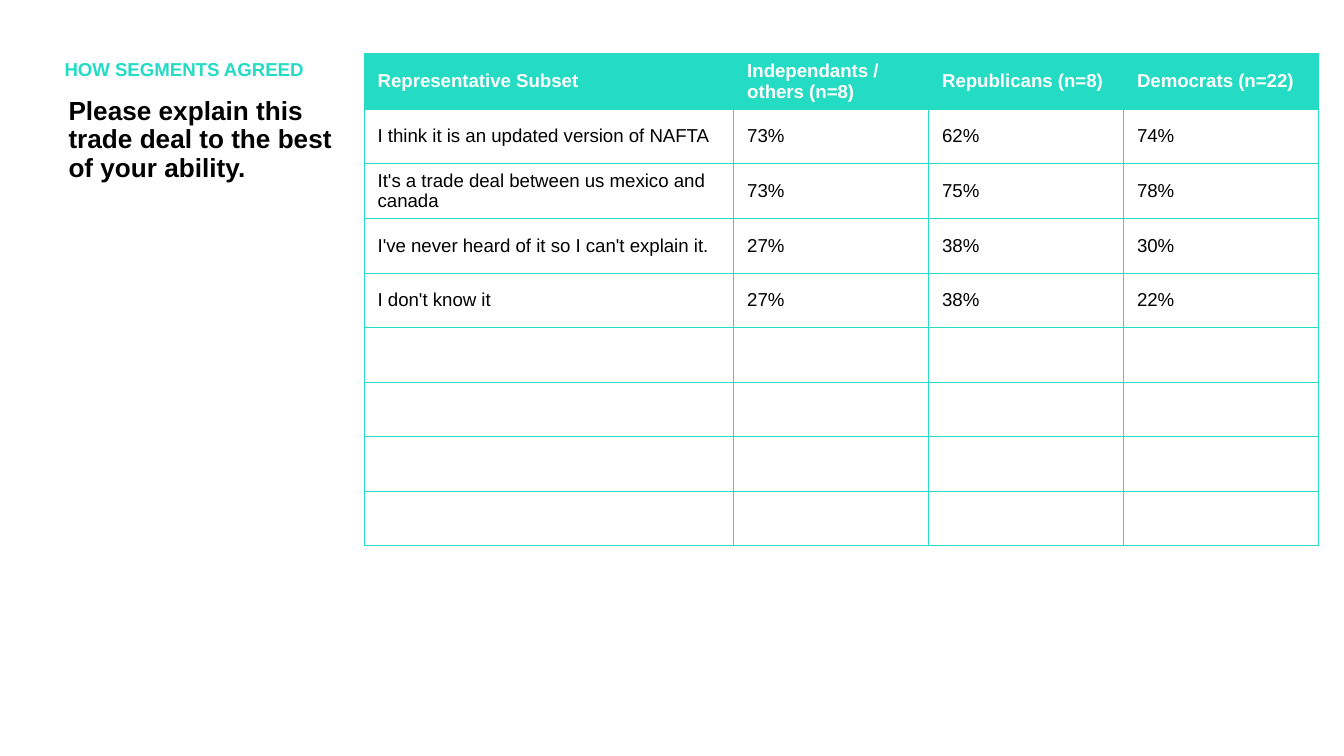
from lxml.etree import SubElement
from pptx import Presentation
from pptx.dml.color import RGBColor
from pptx.enum.text import MSO_ANCHOR as Anchor, MSO_AUTO_SIZE as Fit, PP_ALIGN as Align
from pptx.oxml.ns import qn
from pptx.util import Inches, Pt

TEAL = RGBColor(0x24, 0xDB, 0xC3)
WHITE = RGBColor(0xFF, 0xFF, 0xFF)
BLACK = RGBColor(0, 0, 0)
FONT = "Arial"

HEADS = ["Representative Subset", "Independants / others (n=8)",
         "Republicans (n=8)", "Democrats (n=22)"]
ROWS = [
    ["I think it is an updated version of NAFTA", "73%", "62%", "74%"],
    ["It's a trade deal between us mexico and canada", "73%", "75%", "78%"],
    ["I've never heard of it so I can't explain it.", "27%", "38%", "30%"],
    ["I don't know it", "27%", "38%", "22%"],
]
SPARE = 4  # empty rows under the answers
SHARES = [2.75, 1.45, 1.45, 1.45]


def write(frame, text, size=10, color=BLACK, bold=False, lead=None, before=None):
    """Put one formatted, left-aligned paragraph in a text frame."""
    par = frame.paragraphs[0]
    par.alignment = Align.LEFT
    par.line_spacing = lead
    par.space_before = before
    run = par.add_run()
    run.text = text
    font = run.font
    font.name, font.size, font.bold = FONT, Pt(size), bold
    font.color.rgb = color
    return par


def place(holder, box, text, **style):
    """Move a placeholder to its box and fill it, with no bullet."""
    holder.left, holder.top, holder.width, holder.height = map(Inches, box)
    frame = holder.text_frame
    frame.auto_size, frame.word_wrap = Fit.NONE, True
    frame.vertical_anchor = Anchor.TOP
    par = write(frame, text, lead=0.9, before=Pt(10), bold=True, **style)
    props = par._p.get_or_add_pPr()
    props.set("marL", "0")
    props.set("indent", "0")
    SubElement(props, qn("a:buNone"))


def edge(cell, color=TEAL, width=0.75):
    """Draw all four borders of a cell, ahead of its fill."""
    props = cell._tc.get_or_add_tcPr()
    for spot, side in enumerate(("lnL", "lnR", "lnT", "lnB")):
        line = SubElement(props, qn(f"a:{side}"), w=str(Pt(width)))
        fill = SubElement(line, qn("a:solidFill"))
        SubElement(fill, qn("a:srgbClr"), val=str(color))
        props.insert(spot, line)


def add_grid(slide, box):
    """Table of answers by segment."""
    left, top, width, height = map(Inches, box)
    data = [HEADS] + ROWS + [[""] * len(HEADS)] * SPARE
    table = slide.shapes.add_table(len(data), len(HEADS), left, top, width, height).table
    table.horz_banding = False
    for col, share in zip(table.columns, SHARES):
        col.width = int(width * share / sum(SHARES))
    for r, texts in enumerate(data):
        table.rows[r].height = height // len(data)
        head = r == 0
        for c, text in enumerate(texts):
            cell = table.cell(r, c)
            cell.vertical_anchor = Anchor.MIDDLE
            cell.fill.solid()
            cell.fill.fore_color.rgb = TEAL if head else WHITE
            edge(cell)
            if text:
                write(cell.text_frame, text, color=WHITE if head else BLACK, bold=head)


def add_side(slide, box):
    """Label above the question, in the left column."""
    left, top, width, height = box
    label = 0.28
    place(slide.placeholders[1], (left - 0.03, top, width, label),
          "HOW SEGMENTS AGREED", color=TEAL)
    place(slide.shapes.title, (left, top + label, width, height - label),
          "Please explain this trade deal to the best of your ability.", size=14)


def main():
    deck = Presentation()
    deck.slide_width = Inches(10)
    deck.slide_height = deck.slide_width * 9 // 16
    slide = deck.slides.add_slide(deck.slide_layouts[1])
    add_side(slide, (0.41, 0.4, 2.3, 4.69))
    add_grid(slide, (2.71, 0.4, 7.1, 3.65))
    deck.save("out.pptx")


if __name__ == "__main__":
    main()
